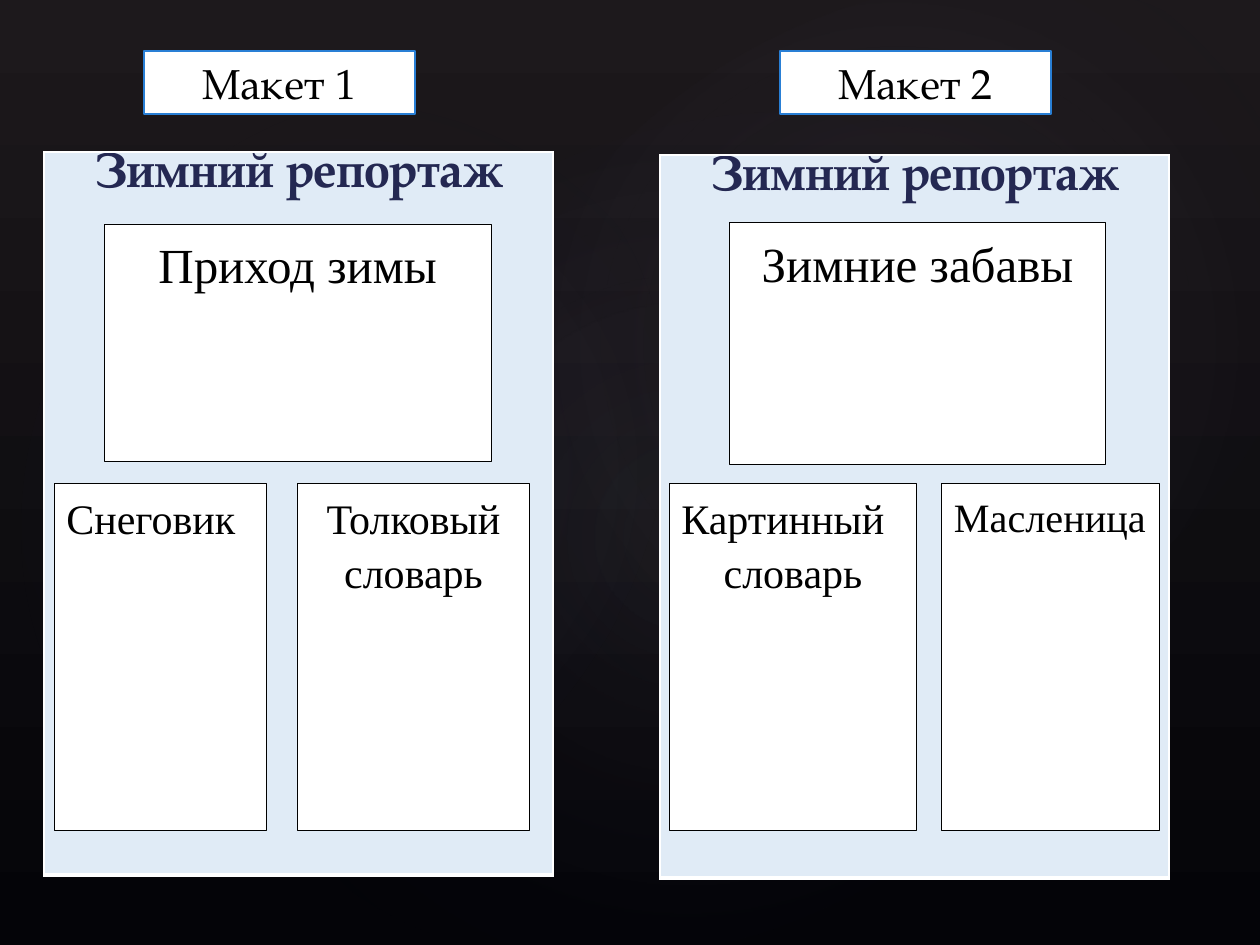
from pptx import Presentation
from pptx.dml.color import RGBColor as RGB
from pptx.enum.shapes import MSO_SHAPE as Shape
from pptx.enum.text import MSO_ANCHOR as Anchor, PP_ALIGN as Align
from pptx.oxml import parse_xml
from pptx.oxml.ns import nsdecls, qn
from pptx.util import Pt

PX = 914400 / 126
WHITE, BLACK = RGB(255, 255, 255), RGB(0, 0, 0)
BLUE, NAVY, PALE = RGB(0x29, 0x7F, 0xD5), RGB(0x24, 0x28, 0x52), RGB(0xE0, 0xEB, 0xF6)
TOP, BASE = RGB(0x1D, 0x19, 0x1C), RGB(0x04, 0x04, 0x08)
GLOW = RGB(0xC4, 0xBC, 0xC6)
SERIF, HEAD = "Times New Roman", "TeX Gyre Pagella"
MID, LEFT = Align.CENTER, Align.LEFT

# Content: lengths in px
TITLE = "Зимний репортаж"
GLOWS = [  # place, rotation, centre opacity in percent
    ((189, 144, 998, 786), 328.7, 7),
    ((-38, 161, 764, 617), 294.3, 8),
    ((451, 16, 893, 655), 328.7, 8),
]
PAGES = [
    {"name": "Макет 1", "tag": 144, "page": (44, 152), "parts": [
        ((104, 224, 387, 238), 28, [("Приход зимы", MID)]),
        ((54, 483, 213, 347), 24, [("Снеговик", LEFT)]),
        ((297, 483, 233, 347), 24, [("Толковый словарь", MID)]),
    ]},
    {"name": "Макет 2", "tag": 780, "page": (660, 155), "parts": [
        ((729, 223, 377, 242), 28, [("Зимние забавы", MID)]),
        ((669, 483, 248, 347), 24, [("Картинный", LEFT), ("словарь", MID)]),
        ((941, 483, 218, 347), 23, [("Масленица", MID)]),
    ]},
]
TAG_Y, TAG_W, TAG_H = 51, 271, 63
PAGE_W, PAGE_H = 509, 723
EDGES = [("L", 1), ("R", 1), ("T", 1), ("B", 3)]


def emu(*nums):
    return [round(n * PX) for n in nums]


def style(par, font, size, color, align, bold=False):
    par.alignment = align
    for run in par.runs:
        face = run.font
        face.name, face.size, face.bold = font, Pt(size), bold
        face.color.rgb = color


def add_box(slide, place, lines, font, size, edge, width, gap=1.0):
    box = slide.shapes.add_shape(Shape.RECTANGLE, *emu(*place))
    box.shadow.inherit = False
    box.fill.solid()
    box.fill.fore_color.rgb = WHITE
    box.line.color.rgb = edge
    box.line.width = Pt(width)
    frame = box.text_frame
    frame.word_wrap = True
    frame.vertical_anchor = Anchor.TOP
    frame.text = "\n".join(text for text, _ in lines)
    for par, (_, align) in zip(frame.paragraphs, lines):
        style(par, font, size, BLACK, align)
        par.line_spacing = gap


def add_glow(slide, place, turn, alpha):
    glow = slide.shapes.add_shape(Shape.OVAL, *emu(*place))
    glow.shadow.inherit = False
    glow.rotation = turn
    glow.line.fill.background()
    glow.fill.background()
    stops = "".join(
        f'<a:gs pos="{pos}000"><a:srgbClr val="{color}">'
        f'<a:alpha val="{part}000"/></a:srgbClr></a:gs>'
        for pos, color, part in [(0, GLOW, alpha), (58, NAVY, 0), (100, NAVY, 0)])
    props = glow.fill._xPr
    props.replace(props.find(qn("a:noFill")), parse_xml(
        f'<a:gradFill {nsdecls("a")}><a:gsLst>{stops}</a:gsLst><a:path path="circle">'
        '<a:fillToRect l="50000" t="50000" r="50000" b="50000"/></a:path></a:gradFill>'))


def add_page(slide, left, top):
    table = slide.shapes.add_table(1, 1, *emu(left, top, PAGE_W, PAGE_H)).table
    cell = table.cell(0, 0)
    cell.fill.solid()
    cell.fill.fore_color.rgb = PALE
    cell.margin_left = cell.margin_right = emu(9)[0]
    cell.margin_top = cell.margin_bottom = 0
    cell.text_frame.text = TITLE
    par = cell.text_frame.paragraphs[0]
    style(par, HEAD, 28, NAVY, MID, True)
    par.space_before = Pt(10)
    props = cell._tc.get_or_add_tcPr()
    for spot, (side, width) in enumerate(EDGES):
        props.insert(spot, parse_xml(
            f'<a:ln{side} {nsdecls("a")} w="{Pt(width)}"><a:solidFill>'
            f'<a:srgbClr val="{WHITE}"/></a:solidFill></a:ln{side}>'))


def main():
    deck = Presentation()
    deck.slide_width, deck.slide_height = emu(1260, 945)
    slide = deck.slides.add_slide(deck.slide_layouts[6])

    # Dark backdrop with soft glows
    back = slide.background.fill
    back.gradient()
    back.gradient_angle = 270
    for stop, color in zip(back.gradient_stops, (TOP, BASE)):
        stop.color.rgb = color
    for glow in GLOWS:
        add_glow(slide, *glow)

    # Two page layouts, each with its label
    for page in PAGES:
        add_page(slide, *page["page"])
        for place, size, lines in page["parts"]:
            add_box(slide, place, lines, SERIF, size, BLACK, 0.5, 1.07)
        add_box(slide, (page["tag"], TAG_Y, TAG_W, TAG_H),
                [(page["name"], MID)], HEAD, 24, BLUE, 1.5)

    deck.save("out.pptx")


if __name__ == "__main__":
    main()
